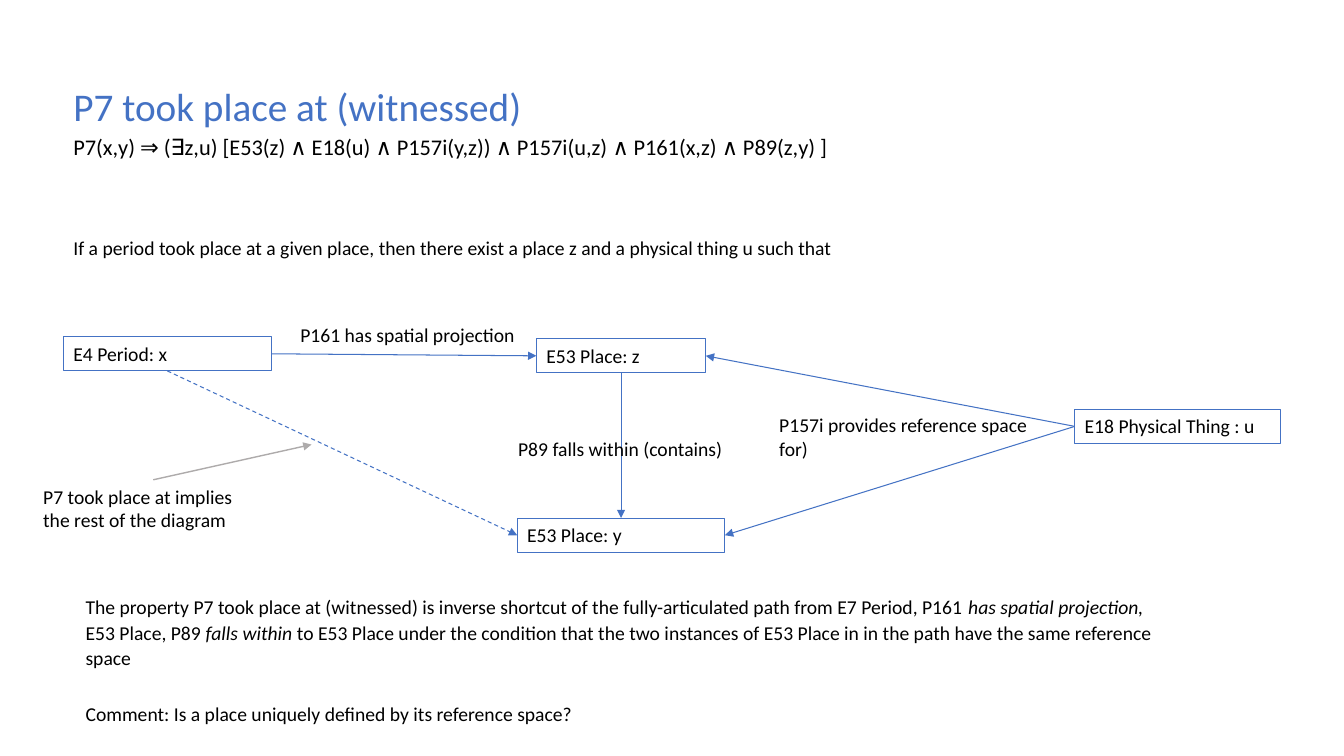
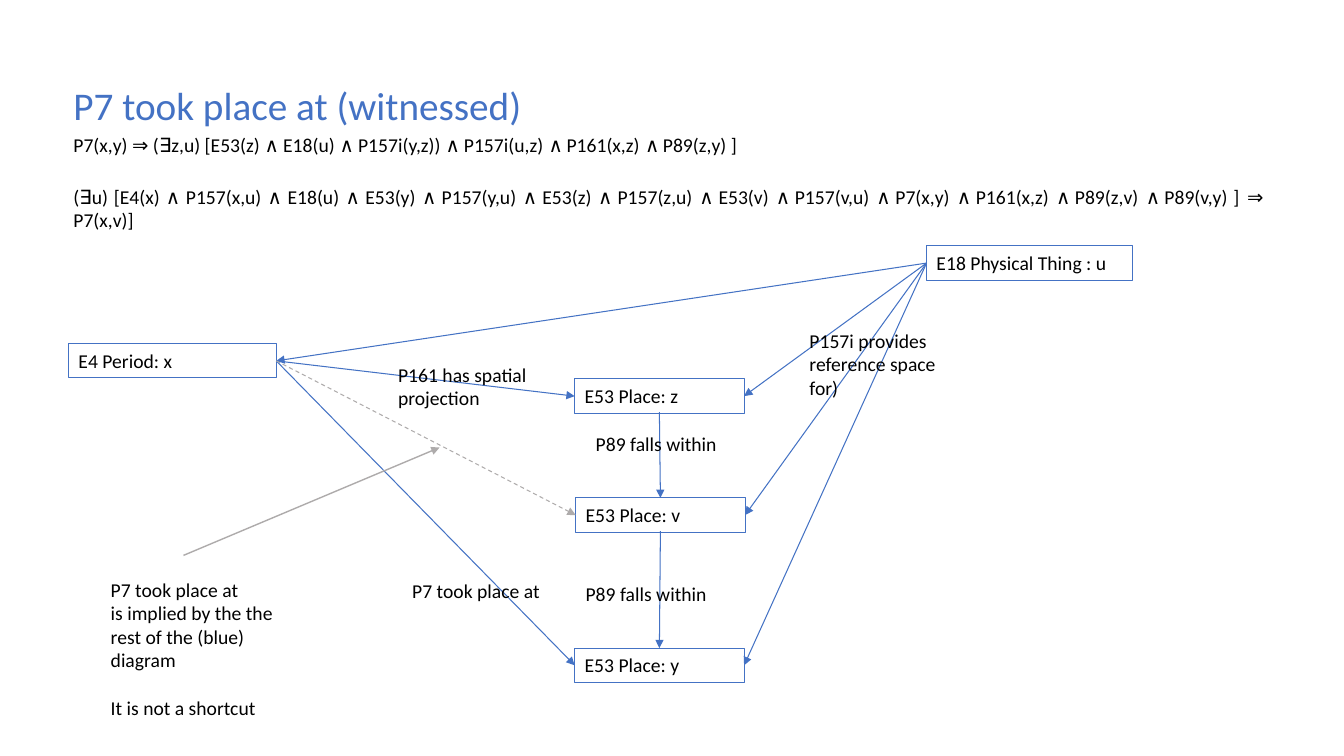
from lxml import etree
from pptx import Presentation
from pptx.dml.color import RGBColor
from pptx.enum.dml import MSO_LINE_DASH_STYLE as Dash
from pptx.enum.shapes import MSO_CONNECTOR as Connector, MSO_SHAPE as Shape
from pptx.enum.text import MSO_ANCHOR as Anchor, MSO_AUTO_SIZE as AutoSize, PP_ALIGN as Align
from pptx.oxml.ns import qn
from pptx.util import Inches, Pt

COLORS = {"blue": "4472C4", "grey": "AEABAB", "black": "000000"}
FONT = "Calibri"
TITLE = "P7 took place at (witnessed)"
RULE = "P7(x,y) ⇒ (∃z,u) [E53(z) ∧ E18(u) ∧ P157i(y,z)) ∧ P157i(u,z) ∧ P161(x,z) ∧ P89(z,y) ]"
BOX_HEIGHT = 0.34
TOP, LEFT, BOTTOM, RIGHT = range(4)  # connection sites of a rectangle


def add_text(page, at, paragraphs, spacing=1.0, outlined=False):
    """Each paragraph is (space before, runs); each run is (text, format)."""
    lengths = [Inches(value) for value in at]
    if outlined:
        box = page.shapes.add_shape(Shape.RECTANGLE, *lengths)
        box.shadow.inherit = False
        box.fill.background()
        box.line.color.rgb = RGBColor.from_string(COLORS["blue"])
        box.line.width = Pt(0.75)
    else:
        box = page.shapes.add_textbox(*lengths)
    frame = box.text_frame
    frame.word_wrap = True
    frame.auto_size = AutoSize.SHAPE_TO_FIT_TEXT
    frame.vertical_anchor = Anchor.TOP
    for index, (space, runs) in enumerate(paragraphs):
        para = frame.add_paragraph() if index else frame.paragraphs[0]
        para.alignment = Align.LEFT
        para.line_spacing = spacing
        para.space_before = Pt(space)
        for text, style in runs:
            span = para.add_run()
            span.text = text
            span.font.name = FONT
            span.font.size = Pt(style.get("size", 14))
            span.font.italic = style.get("italic", False)
            span.font.color.rgb = RGBColor.from_string(COLORS[style.get("color", "black")])
    return box


def add_arrow(page, start, end, color="blue", width=0.75, dashed=False):
    arrow = page.shapes.add_connector(
        Connector.STRAIGHT, *[Inches(value) for value in (*start, *end)])
    arrow.line.color.rgb = RGBColor.from_string(COLORS[color])
    arrow.line.width = Pt(width)
    if dashed:
        arrow.line.dash_style = Dash.DASH
    properties = arrow._element.spPr
    etree.SubElement(properties.find(qn("a:ln")), qn("a:tailEnd"), type="triangle")
    etree.SubElement(properties, qn("a:effectLst"))
    return arrow


# What differs between the two diagrams
diagrams = [
    {
        "rule_size": 16,
        "heading_height": 1.19,
        "boxes": {  # left, top, width, text
            "x": (0.63, 3.34, 2.06, "E4 Period: x"),
            "z": (5.32, 3.36, 1.68, "E53 Place: z"),
            "y": (5.13, 5.14, 2.06, "E53 Place: y"),
            "u": (10.66, 4.06, 2.04, "E18 Physical Thing : u"),
        },
        "links": [  # from box, site, to box, site
            ("u", LEFT, "z", RIGHT),
            ("u", LEFT, "y", RIGHT),
            ("x", RIGHT, "z", LEFT),
        ],
        "implied": ("x", BOTTOM, "y", LEFT, "blue"),
        "falls": [((6.16, 3.7), (6.16, 5.14))],
        "pointer": ((1.52, 4.76), (3.09, 4.41)),
        "labels": [  # position and size, lines
            ((0.63, 2.29, 8.6, 0.34),
             ["If a period took place at a given place, then there exist "
              "a place z and a physical thing u such that"]),
            ((7.63, 4.05, 2.69, 0.57), ["P157i provides reference space for)"]),
            ((2.88, 3.15, 2.5, 0.34), ["P161 has spatial projection"]),
            ((5.04, 4.29, 2.95, 0.34), ["P89 falls within (contains)"]),
            ((0.33, 4.76, 2.37, 0.57), ["P7 took place at implies the rest of the diagram"]),
        ],
    },
    {
        "rule_size": 14,
        "heading_height": 1.4,
        "second_rule":
            "(∃u) [E4(x) ∧ P157(x,u) ∧ E18(u) ∧ E53(y) ∧ P157(y,u) ∧ E53(z) ∧ P157(z,u) ∧ E53(v) "
            "∧ P157(v,u) ∧ P7(x,y) ∧ P161(x,z) ∧ P89(z,v) ∧ P89(v,y) ] ⇒ P7(x,v)]",
        "boxes": {
            "x": (0.68, 3.41, 2.06, "E4 Period: x"),
            "z": (5.7, 3.76, 1.68, "E53 Place: z"),
            "v": (5.71, 4.94, 1.68, "E53 Place: v"),
            "y": (5.7, 6.43, 1.68, "E53 Place: y"),
            "u": (9.19, 2.44, 2.04, "E18 Physical Thing : u"),
        },
        "links": [
            ("u", LEFT, "x", RIGHT),
            ("u", LEFT, "z", RIGHT),
            ("u", LEFT, "v", RIGHT),
            ("u", LEFT, "y", RIGHT),
            ("x", RIGHT, "z", LEFT),
            ("x", RIGHT, "y", LEFT),
        ],
        "implied": ("x", RIGHT, "v", LEFT, "grey"),
        "falls": [((6.54, 4.09), (6.55, 4.94)), ((6.55, 5.27), (6.54, 6.43))],
        "pointer": ((1.82, 5.51), (4.36, 4.44)),
        "labels": [
            ((7.93, 3.21, 1.55, 0.81), ["P157i provides reference space for)"]),
            ((3.85, 3.55, 1.66, 0.57), ["P161 has spatial", "projection"]),
            ((5.81, 4.24, 1.68, 0.34), ["P89 falls within"]),
            ((5.71, 5.72, 1.68, 0.34), ["P89 falls within"]),
            ((3.99, 5.69, 1.53, 0.34), ["P7 took place at"]),
        ],
    },
]

deck = Presentation()
deck.slide_width, deck.slide_height = Inches(13.33), Inches(7.5)
pages = []

for diagram in diagrams:
    page = deck.slides.add_slide(deck.slide_layouts[6])
    pages.append(page)

    # Title and rules
    heading = [(0, [(TITLE, {"size": 28, "color": "blue"})]),
               (2, [(RULE, {"size": diagram["rule_size"]})])]
    if "second_rule" in diagram:
        heading.append((20, [(diagram["second_rule"], {})]))
    heading_box = add_text(page, (0.63, 0.73, 12, diagram["heading_height"]), heading, 1.07)
    for para in heading_box.text_frame.paragraphs[2:]:
        para.alignment = Align.JUSTIFY
        para.line_spacing = 1.0

    # Entity boxes
    boxes = {}
    for name, (left, top, width, text) in diagram["boxes"].items():
        boxes[name] = add_text(page, (left, top, width, BOX_HEIGHT),
                               [(0, [(text, {})])], outlined=True)

    # Arrows glued to the boxes, the implied one dashed
    links = [(*link, "blue") for link in diagram["links"]] + [diagram["implied"]]
    for link in links:
        source, source_site, target, target_site, color = link
        arrow = add_arrow(page, (0, 0), (1, 1), color, dashed=link == diagram["implied"])
        arrow.begin_connect(boxes[source], source_site)
        arrow.end_connect(boxes[target], target_site)

    # Downward arrows and the pointer from the note
    for start, end in diagram["falls"]:
        add_arrow(page, start, end)
    add_arrow(page, *diagram["pointer"], "grey", 1)

    # Labels
    for at, lines in diagram["labels"]:
        add_text(page, at, [(0, [(line, {})]) for line in lines])

# Explanation under the first diagram
add_text(pages[0], (0.75, 5.84, 10.79, 1.41), [
    (0, [
        ("The property P7 took place at (witnessed) is inverse shortcut of the "
         "fully-articulated path from E7 Period, P161 ", {}),
        ("has spatial projection, ", {"italic": True}),
        ("E53 Place, P89 ", {}),
        ("falls within ", {"italic": True}),
        ("to E53 Place under the condition that the two instances of E53 Place "
         "in in the path have the same reference space", {}),
    ]),
    (22, [("Comment: Is a place uniquely defined by its reference space?", {})]),
], 1.07)

# Note beside the second diagram
add_text(pages[1], (1, 5.68, 2.06, 1.51), [
    (0, [("P7 took place at", {})]),
    (0, [("is implied by the the rest of the (blue) diagram", {})]),
    (17, [("It is not a shortcut", {})]),
])

deck.save("out.pptx")
